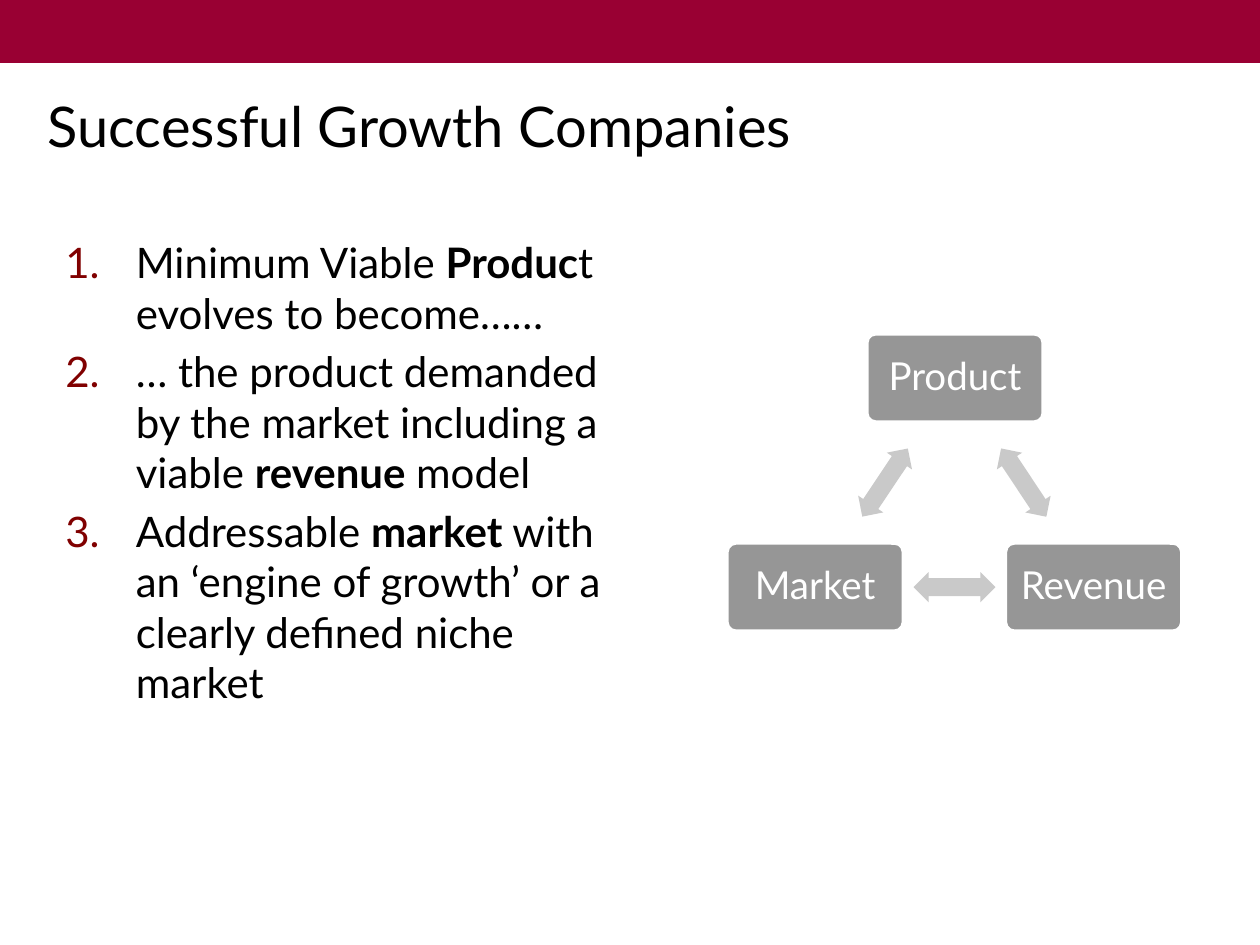
import math
from dataclasses import dataclass

from lxml import etree
from pptx import Presentation
from pptx import util as u
from pptx.dml.color import RGBColor
from pptx.enum import shapes, text
from pptx.oxml.ns import qn

PX = u.Inches(1) // 100


@dataclass(frozen=True)
class Theme:
    font: str = "Lato"
    banner: str = "990033"
    ink: str = "000000"
    number: str = "800000"
    node: str = "969696"
    arrow: str = "C9C9C9"
    white: str = "FFFFFF"
    title_size: int = 32
    body_size: int = 24
    node_size: int = 22


class Deck:
    def __init__(self, theme, width, height):
        self.theme = theme
        self.prs = Presentation()
        self.prs.slide_width = width * PX
        self.prs.slide_height = height * PX
        self.s = self.prs.slides.add_slide(self.prs.slide_layouts[6])

    def shape(self, kind, box, fill, line=None):
        sp = self.s.shapes.add_shape(kind, *(v * PX for v in box))
        sp.shadow.inherit = False
        sp.fill.solid()
        sp.fill.fore_color.rgb = RGBColor.from_string(fill)
        if line:
            sp.line.color.rgb = RGBColor.from_string(line)
            sp.line.width = u.Pt(2)
        else:
            sp.line.fill.background()
        return sp

    def textbox(self, box, anchor):
        tf = self.s.shapes.add_textbox(*(v * PX for v in box)).text_frame
        tf.word_wrap = True
        tf.vertical_anchor = anchor
        return tf

    def run(self, p, words, size, color, bold=False):
        r = p.add_run()
        r.text = words
        r.font.name = self.theme.font
        r.font.size = u.Pt(size)
        r.font.bold = bold
        r.font.color.rgb = RGBColor.from_string(color)

    def title(self, box, words):
        tf = self.textbox(box, text.MSO_ANCHOR.BOTTOM)
        self.run(tf.paragraphs[0], words, self.theme.title_size, self.theme.ink)

    def numbered(self, box, items, indent):
        tf = self.textbox(box, text.MSO_ANCHOR.TOP)
        for i, item in enumerate(items):
            p = tf.add_paragraph() if i else tf.paragraphs[0]
            if i:
                p.space_before = u.Pt(self.theme.body_size * 0.2)
            ppr = p._p.get_or_add_pPr()
            ppr.set("marL", str(indent * PX))
            ppr.set("indent", str(-indent * PX))
            color = etree.SubElement(ppr, qn("a:buClr"))
            etree.SubElement(color, qn("a:srgbClr"), val=self.theme.number)
            etree.SubElement(ppr, qn("a:buFont"), typeface=self.theme.font)
            etree.SubElement(ppr, qn("a:buAutoNum"), type="arabicPeriod")
            for words, bold in item:
                self.run(p, words, self.theme.body_size, self.theme.ink, bold)

    def node(self, center, size, words):
        (x, y), (w, h) = center, size
        sp = self.shape(shapes.MSO_SHAPE.ROUNDED_RECTANGLE,
                        (x - w // 2, y - h // 2, w, h),
                        self.theme.node, self.theme.white)
        sp.adjustments[0] = 0.1
        tf = sp.text_frame
        tf.margin_left = tf.margin_right = 9 * PX
        tf.margin_top = tf.margin_bottom = 9 * PX
        tf.word_wrap = True
        tf.vertical_anchor = text.MSO_ANCHOR.MIDDLE
        p = tf.paragraphs[0]
        p.alignment = text.PP_ALIGN.CENTER
        p.line_spacing = 0.9
        self.run(p, words, self.theme.node_size, self.theme.white)

    def arrow(self, start, end, size):
        (x1, y1), (x2, y2), (w, h) = start, end, size
        box = ((x1 + x2 - w) // 2, (y1 + y2 - h) // 2, w, h)
        sp = self.shape(shapes.MSO_SHAPE.LEFT_RIGHT_ARROW, box, self.theme.arrow)
        sp.adjustments[0] = 0.6
        sp.adjustments[1] = 0.5
        sp.rotation = math.degrees(math.atan2(y2 - y1, x2 - x1)) % 360


def main():
    deck = Deck(Theme(), 1000, 750)
    deck.shape(shapes.MSO_SHAPE.RECTANGLE, (0, 0, 1000, 50), deck.theme.banner)
    deck.title((28, 63, 780, 68), "Successful Growth Companies")
    deck.numbered((42, 183, 457, 394), [
        [("Minimum Viable ", False), ("Produc", True),
         ("t evolves to become……", False)],
        [("… the product demanded by the market including a viable ", False),
         ("revenue", True), (" model", False)],
        [("Addressable ", False), ("market", True),
         (" with an ‘engine of growth’ or a clearly defined niche market", False)],
    ], 56)
    cycle = [("Product", (758, 300)), ("Revenue", (868, 466)), ("Market", (647, 466))]
    for (words, center), (_, following) in zip(cycle, cycle[1:] + cycle[:1]):
        deck.node(center, (140, 70), words)
        deck.arrow(center, following, (65, 24))
    deck.prs.save("out.pptx")


if __name__ == "__main__":
    main()
